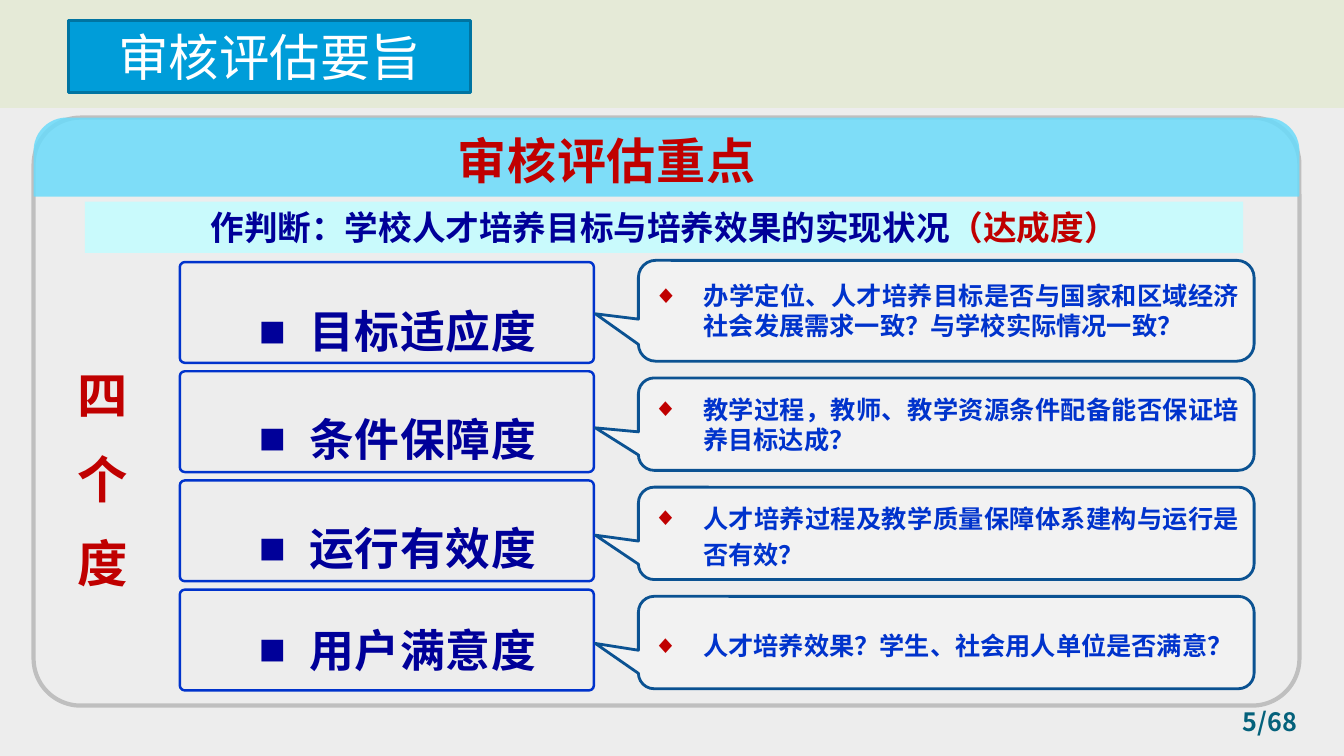
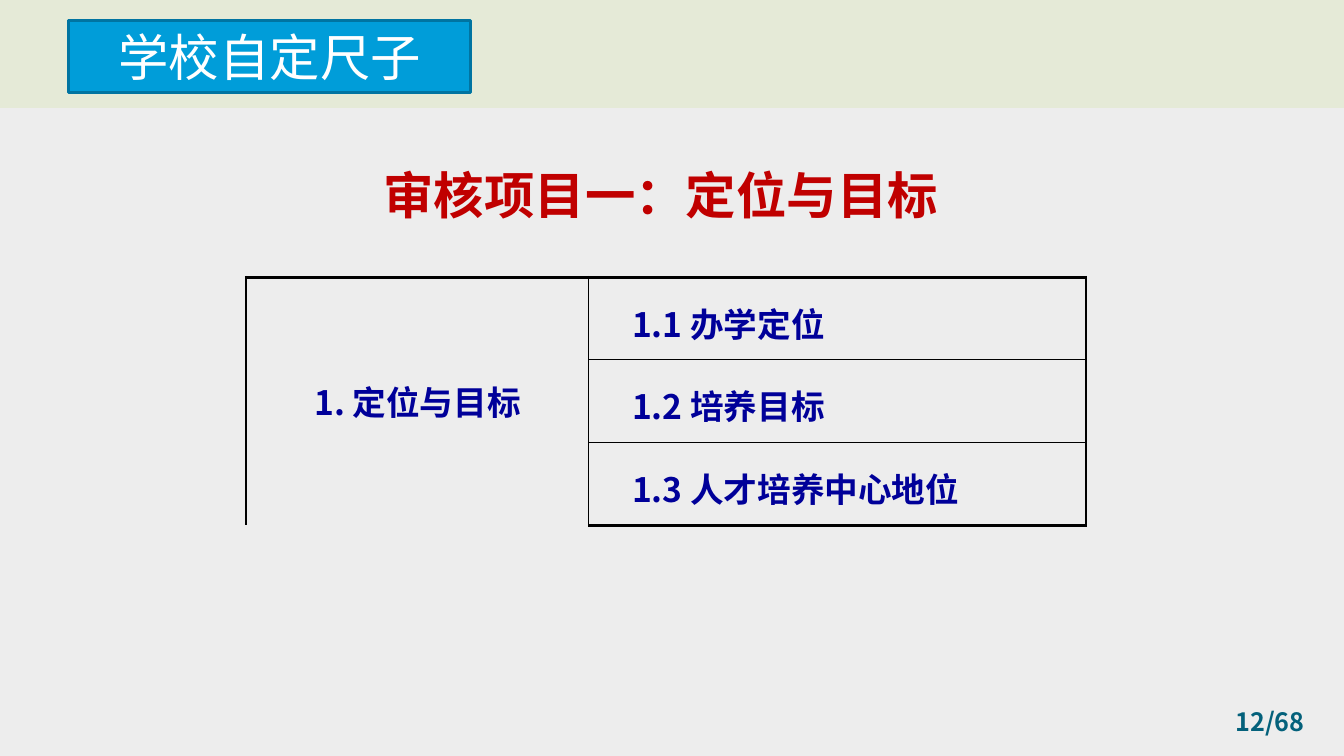
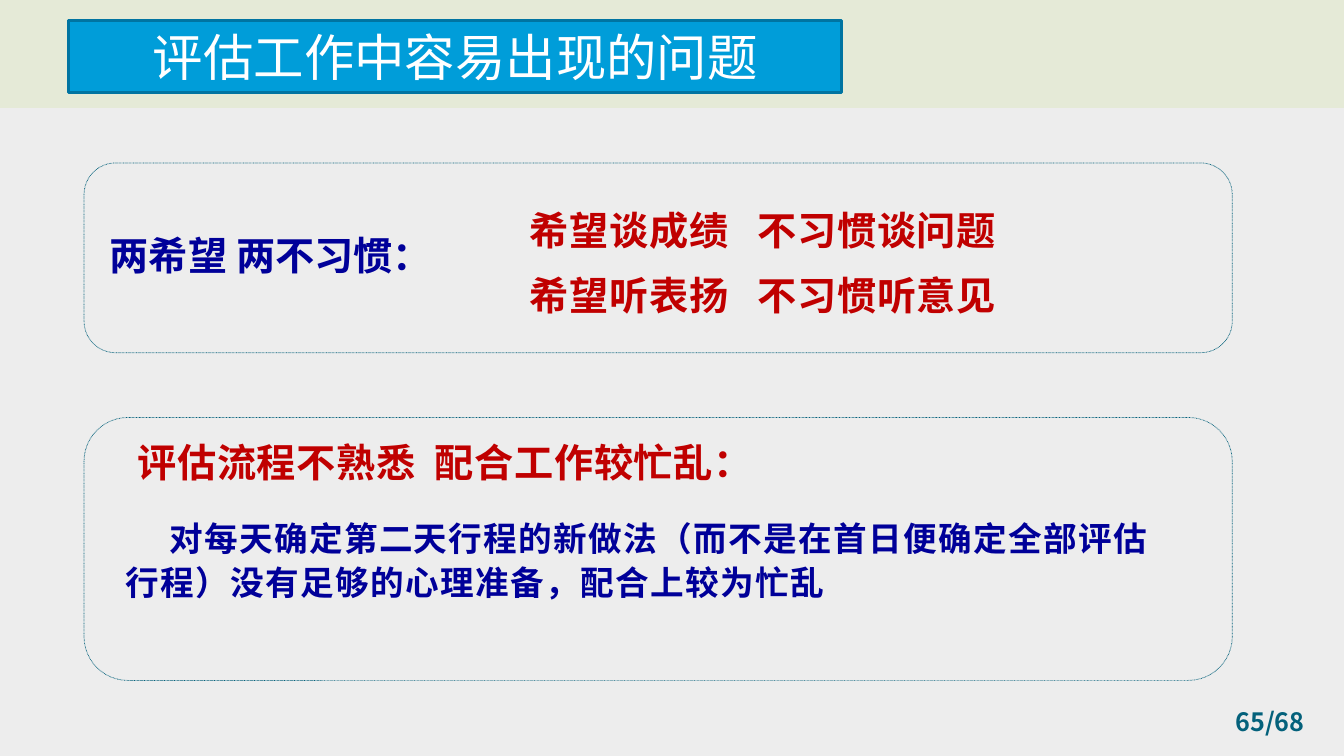
from dataclasses import dataclass, replace
from typing import Optional

from lxml import etree
from pptx import Presentation
from pptx import util as u
from pptx.dml.color import RGBColor
from pptx.enum import dml, shapes, text
from pptx.oxml import ns

# Grid: 160 columns by 90 rows of square cells
COLUMNS, ROWS = 160, 90
CELL = u.Inches(7.5) / ROWS

# Shared look
SANS, ARIAL = "Noto Sans CJK SC", "Arial"
NAVY, BLUE, RED, TEAL = "000099", "0033CC", "C00000", "04617B"
SHAPE = shapes.MSO_SHAPE
ALIGN = text.PP_ALIGN
MIDDLE = text.MSO_ANCHOR.MIDDLE
PAGE_COUNT = 68


@dataclass(frozen=True)
class Box:
    left: float
    top: float
    width: float
    height: float

    def lengths(self) -> list[int]:
        return [grid(n) for n in (self.left, self.top, self.width, self.height)]


@dataclass(frozen=True)
class Style:
    size: float
    color: str
    font: str = SANS
    bold: bool = True
    align: ALIGN = ALIGN.LEFT
    spacing: float = 0  # between letters, in points
    line_spacing: Optional[float] = None
    margin: float = 0  # left margin, in inches
    indent: float = 0  # first line, in inches
    bullet: str = ""
    bullet_color: str = ""
    tab: float = 0  # tab stop, in inches


@dataclass(frozen=True)
class Dimension:
    label: str
    label_top: float
    question: str
    callout: Box
    pointer: tuple[float, float]
    line_spacing: float = 1


TITLE = Style(36, "FFFFFF", bold=False, align=ALIGN.CENTER)
PAGE_NUMBER = Style(18, TEAL, align=ALIGN.CENTER)
LABEL = Style(32, NAVY, align=ALIGN.CENTER, spacing=0.5, line_spacing=2,
              margin=0.5, indent=-0.5, bullet="■")
QUESTION = Style(18, BLUE, align=ALIGN.JUSTIFY, margin=0.5, indent=-0.5,
                 bullet="◆", bullet_color=RED)
HEADING = Style(36, RED, align=ALIGN.CENTER)
CELL_TEXT = Style(24, NAVY, align=ALIGN.CENTER)
POINT = Style(28, RED, spacing=0.5)

DIMENSIONS = [
    Dimension("目标适应度", 29.2,
              "办学定位、人才培养目标是否与国家和区域经济社会发展需求一致？与学校实际情况一致？",
              Box(76, 31, 73.3, 12), (-0.57, 0.03)),
    Dimension("条件保障度", 42,
              "教学过程，教师、教学资源条件配备能否保证培养目标达成？",
              Box(76, 45, 73.3, 11), (-0.57, 0.04)),
    Dimension("运行有效度", 55,
              "人才培养过程及教学质量保障体系建构与运行是否有效？",
              Box(76, 58, 73.3, 11), (-0.57, 0.02), 1.2),
    Dimension("用户满意度", 67.1,
              "人才培养效果？学生、社会用人单位是否满意？",
              Box(76, 71, 73.3, 11), (-0.57, 0.01), 1.2),
]


def grid(cells: float) -> int:
    return round(cells * CELL)


def rgb(color: str) -> RGBColor:
    return RGBColor.from_string(color)


def add_xml(parent, tag: str, **attributes):
    names = {key: str(value) for key, value in attributes.items()}
    return etree.SubElement(parent, ns.qn(tag), names)


# Text
def format_paragraph(paragraph, style: Style) -> None:
    paragraph.alignment = style.align
    if style.line_spacing:
        paragraph.line_spacing = style.line_spacing
    properties = paragraph._p.get_or_add_pPr()
    if style.margin or style.indent:
        properties.set("marL", str(u.Inches(style.margin)))
        properties.set("indent", str(u.Inches(style.indent)))
    if style.bullet_color:
        add_xml(add_xml(properties, "a:buClr"), "a:srgbClr", val=style.bullet_color)
    if style.bullet:
        add_xml(properties, "a:buFont", typeface=ARIAL)
        add_xml(properties, "a:buChar", char=style.bullet)
    if style.tab:
        stops = add_xml(properties, "a:tabLst")
        add_xml(stops, "a:tab", pos=u.Inches(style.tab), algn="l")
    font = paragraph.font
    font.size, font.bold, font.name = u.Pt(style.size), style.bold, style.font
    font.color.rgb = rgb(style.color)
    defaults = properties.find(ns.qn("a:defRPr"))
    add_xml(defaults, "a:ea", typeface=style.font)
    if style.spacing:
        defaults.set("spc", str(round(style.spacing * 100)))


def write(frame, lines: str, style: Style) -> None:
    frame.word_wrap = True
    for number, line in enumerate(lines.split("\n")):
        paragraph = frame.add_paragraph() if number else frame.paragraphs[0]
        paragraph.add_run().text = line
        format_paragraph(paragraph, style)


def add_text(slide, box: Box, lines: str, style: Style):
    frame = slide.shapes.add_textbox(*box.lengths()).text_frame
    write(frame, lines, style)
    frame.auto_size = text.MSO_AUTO_SIZE.SHAPE_TO_FIT_TEXT
    return frame


# Shapes
def paint(shape, fill: str = "", line: str = "", width: float = 1) -> None:
    if fill:
        shape.fill.solid()
        shape.fill.fore_color.rgb = rgb(fill)
    else:
        shape.fill.background()
    if line:
        shape.line.color.rgb = rgb(line)
        shape.line.width = u.Pt(width)
    else:
        shape.line.fill.background()


def add_shape(slide, kind: SHAPE, box: Box, fill: str = "", line: str = "",
              width: float = 1, adjust: tuple[float, ...] = (), opacity: int = 100):
    shape = slide.shapes.add_shape(kind, *box.lengths())
    shape.shadow.inherit = False
    paint(shape, fill, line, width)
    for index, value in enumerate(adjust):
        shape.adjustments[index] = value
    if opacity < 100:
        color = shape.element.spPr.find(ns.qn("a:solidFill"))[0]
        add_xml(color, "a:alpha", val=opacity * 1000)
    return shape


# Shared frame: background, top band, title box and page number
def prepare(presentation, layout) -> None:
    background = presentation.slide_master.background.fill
    background.solid()
    background.fore_color.rgb = rgb("EDEDED")
    slide = presentation.slides.add_slide(layout)
    band = add_shape(slide, SHAPE.RECTANGLE, Box(0, 0, COLUMNS, 12.85), "DBE7B6", opacity=40)
    layout.shapes.element.insert(2, band.element)


def format_slide(slide, title: str, page: int, title_width: float = 47.8) -> None:
    box = slide.shapes.title
    box.left, box.top, box.width, box.height = Box(8.2, 2.4, title_width, 8.6).lengths()
    paint(box, "009DD9", "0074A1", 2)
    frame = box.text_frame
    frame.margin_left = frame.margin_right = frame.margin_top = frame.margin_bottom = 0
    frame.vertical_anchor = MIDDLE
    write(frame, title, TITLE)
    number = add_text(slide, Box(142.5, 83.6, 17.4, 4.6), f"{page}/{PAGE_COUNT}", PAGE_NUMBER)
    number.vertical_anchor = MIDDLE


# Slide with the four dimensions
def build_focus(slide) -> None:
    format_slide(slide, "审核评估要旨", 5)
    add_shape(slide, SHAPE.ROUNDED_RECTANGLE, Box(4, 14, 150.7, 70), line="BFBFBF", width=3,
              adjust=(0.08,))
    add_shape(slide, SHAPE.ROUND_2_SAME_RECTANGLE, Box(4, 14, 150.7, 9.4), "6BDBFA",
              adjust=(0.42, 0.01), opacity=85)
    heading = Style(35, RED, ARIAL, spacing=0.5)
    add_text(slide, Box(53.3, 15, 63, 8.3), "审核评估重点", heading)
    side = Style(36, RED, ARIAL, spacing=0.5, line_spacing=u.Pt(60))
    add_text(slide, Box(8, 40, 14.2, 31.6), "四个\n度", side)

    banner = add_shape(slide, SHAPE.RECTANGLE, Box(10.1, 24, 137.9, 6.1), "C9FAFC").text_frame
    banner.vertical_anchor = MIDDLE
    write(banner, "作判断：学校人才培养目标与培养效果的实现状况", CELL_TEXT)
    ending = banner.paragraphs[0].add_run()
    ending.text = "（达成度）"
    ending.font.color.rgb = rgb(RED)

    for row, item in enumerate(DIMENSIONS):
        add_shape(slide, SHAPE.ROUNDED_RECTANGLE, Box(21.4, 31.2 + 13 * row, 49.3, 12),
                  line=BLUE, width=1.75, adjust=(0.05,))
        add_text(slide, Box(22.7, item.label_top, 49.3, 12.2), item.label, LABEL)
        callout = add_shape(slide, SHAPE.ROUNDED_RECTANGULAR_CALLOUT, item.callout, "F2F2F2",
                            "0B5292", 2, (*item.pointer, 0.17)).text_frame
        callout.vertical_anchor = MIDDLE
        write(callout, item.question, replace(QUESTION, line_spacing=item.line_spacing))


# Slide with the table
def add_border(cell, side: str, width: float) -> None:
    line = add_xml(cell._tc.get_or_add_tcPr(), f"a:ln{side}", w=u.Pt(width))
    if width:
        add_xml(add_xml(line, "a:solidFill"), "a:srgbClr", val="000000")
    else:
        add_xml(line, "a:noFill")


def build_standard(slide) -> None:
    format_slide(slide, "学校自定尺子", 12)
    heading = add_text(slide, Box(37.3, 17, 82.7, 12.4), "审核项目一：定位与目标", HEADING)
    heading.margin_top = heading.margin_bottom = u.Inches(0.21)

    elements = ["1.1 办学定位", "1.2 培养目标", "1.3 人才培养中心地位"]
    count = len(elements)
    box = Box(29.3, 33, 100, 9.8 * count)
    table = slide.shapes.add_table(count, 2, *box.lengths()).table
    table.first_row = table.horz_banding = False
    for column, width in zip(table.columns, (40.8, 59.2)):
        column.width = grid(width)
    table.cell(0, 0).merge(table.cell(count - 1, 0))
    write(table.cell(0, 0).text_frame, "1. 定位与目标", CELL_TEXT)
    element_style = replace(CELL_TEXT, align=ALIGN.JUSTIFY, margin=0.3)
    for row, element in enumerate(elements):
        write(table.cell(row, 1).text_frame, element, element_style)

    # Thick outer frame, thin inner lines, none inside the merged cell
    outer, inner = 2.25, 1
    for row in range(count):
        for column in range(2):
            cell = table.cell(row, column)
            cell.vertical_anchor = MIDDLE
            cell.margin_left = cell.margin_right = u.Inches(0.13)
            cell.margin_top = cell.margin_bottom = u.Inches(0.21)
            between = inner if column else 0
            add_border(cell, "L", inner if column else outer)
            add_border(cell, "R", outer if column else inner)
            add_border(cell, "T", between if row else outer)
            add_border(cell, "B", between if row < count - 1 else outer)
            cell.fill.background()


# Slide with the common problems
def build_problems(slide) -> None:
    format_slide(slide, "评估工作中容易出现的问题", 65, 92)
    for top, height in ((19.4, 22.6), (49.7, 31.3)):
        frame = add_shape(slide, SHAPE.ROUNDED_RECTANGLE, Box(10, top, 136.7, height),
                          line=TEAL, width=0.5)
        frame.line.dash_style = dml.MSO_LINE.ROUND_DOT

    add_text(slide, Box(11.9, 26.9, 48, 6.8), "两希望 两不习惯：", Style(28, NAVY))
    habits = ["希望谈成绩\t不习惯谈问题", "希望听表扬\t不习惯听意见"]
    for row, habit in enumerate(habits):
        add_text(slide, Box(61.9, 24 + 7.7 * row, 62, 6.8), habit, replace(POINT, tab=2.26))

    add_text(slide, Box(15.2, 51.6, 122.2, 6.8), "评估流程不熟悉\t配合工作较忙乱：",
             replace(POINT, tab=2.95))
    add_text(slide, Box(13.8, 60.6, 126.2, 11.9),
             "对每天确定第二天行程的新做法（而不是在首日便确定全部评估行程）没有足够的心理准备，配合上较为忙乱",
             Style(24, NAVY, spacing=1, line_spacing=1.1, indent=0.43))


def main() -> None:
    presentation = Presentation()
    presentation.slide_width = grid(COLUMNS)
    presentation.slide_height = grid(ROWS)
    layout = presentation.slide_layouts.get_by_name("Title Only")
    prepare(presentation, layout)
    build_focus(presentation.slides[0])
    for build in (build_standard, build_problems):
        build(presentation.slides.add_slide(layout))
    presentation.save("out.pptx")


if __name__ == "__main__":
    main()
